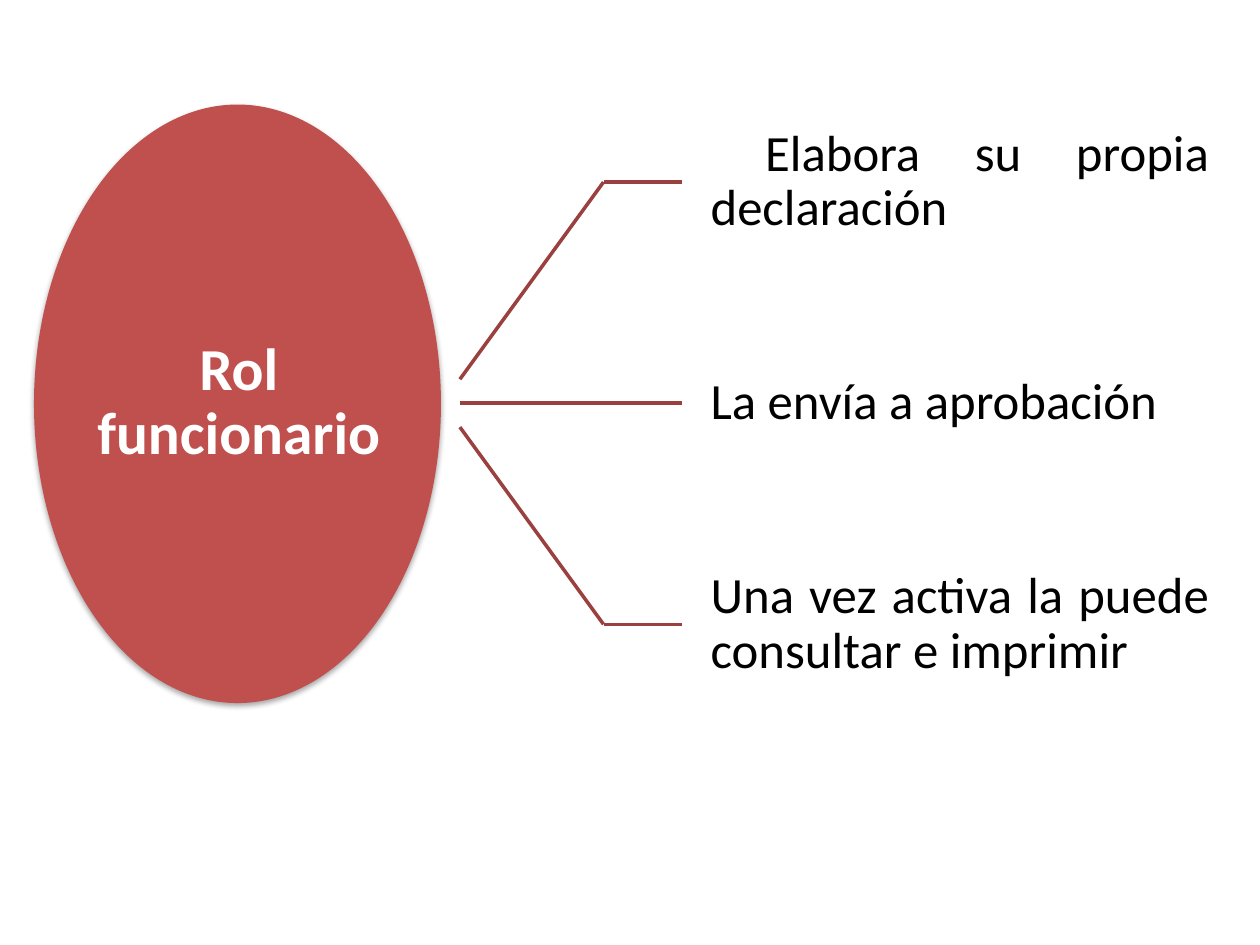
from dataclasses import dataclass

from lxml import etree
from pptx import Presentation
from pptx import util as u
from pptx.dml import color
from pptx.enum import shapes, text
from pptx.oxml import ns

FONT = "Calibri"
ROLE_FILL = "C0504D"
BRANCH_COLOR = "9A403E"
CENTER_Y = 3.2
ROW_PITCH = 1.755
START_PITCH = 0.19
START_X, ELBOW_X, LABEL_X = 3.65, 4.79, 5.41
LABEL_WIDTH, LABEL_HEIGHT = 4.42, 1.76


@dataclass
class Label:
    content: str
    left: float
    top: float
    width: float
    height: float
    inset: float
    size: float
    hex_color: str
    alignment: text.PP_ALIGN
    bold: bool = False


def rgb(hex_color: str) -> color.RGBColor:
    return color.RGBColor.from_string(hex_color)


def set_attributes(target, values: dict) -> None:
    for name, value in values.items():
        setattr(target, name, value)


def draw_label(slide, label: Label) -> None:
    box = slide.shapes.add_textbox(
        *map(u.Inches, (label.left, label.top, label.width, label.height))
    )
    frame = box.text_frame
    sides = ("margin_left", "margin_top", "margin_right", "margin_bottom")
    set_attributes(frame, dict.fromkeys(sides, u.Inches(label.inset)))
    set_attributes(frame, {"word_wrap": True, "vertical_anchor": text.MSO_ANCHOR.MIDDLE})
    paragraph = frame.paragraphs[0]
    set_attributes(paragraph, {"alignment": label.alignment, "line_spacing": 0.9})
    run = paragraph.add_run()
    run.text = label.content
    set_attributes(run.font, {"name": FONT, "size": u.Pt(label.size), "bold": label.bold})
    run.font.color.rgb = rgb(label.hex_color)


def draw_line(slide, x1: float, y1: float, x2: float, y2: float) -> None:
    line = slide.shapes.add_connector(
        shapes.MSO_CONNECTOR.STRAIGHT, *map(u.Inches, (x1, y1, x2, y2))
    )
    line.line.color.rgb = rgb(BRANCH_COLOR)
    line.line.width = u.Pt(2)
    etree.SubElement(line._element.spPr, ns.qn("a:effectLst"))


def draw_role_ellipse(slide) -> None:
    ellipse = slide.shapes.add_shape(
        shapes.MSO_SHAPE.OVAL, *map(u.Inches, (0.27, 0.83, 3.23, 4.75))
    )
    ellipse.fill.solid()
    ellipse.fill.fore_color.rgb = rgb(ROLE_FILL)
    ellipse.line.fill.background()
    ellipse.shadow.inherit = False
    effects = ellipse._element.spPr.find(ns.qn("a:effectLst"))
    shadow = etree.SubElement(
        effects,
        ns.qn("a:outerShdw"),
        blurRad=str(u.Pt(3.1)),
        dist=str(u.Pt(1.8)),
        dir="5400000",
        rotWithShape="0",
    )
    shade = etree.SubElement(shadow, ns.qn("a:srgbClr"), val="000000")
    etree.SubElement(shade, ns.qn("a:alpha"), val="35000")


def draw_branch(slide, offset: int, content: str) -> None:
    row_y = CENTER_Y + offset * ROW_PITCH
    draw_line(slide, START_X, CENTER_Y + offset * START_PITCH, ELBOW_X, row_y)
    draw_line(slide, ELBOW_X, row_y, LABEL_X, row_y)
    draw_label(
        slide,
        Label(content, LABEL_X, row_y - LABEL_HEIGHT / 2, LABEL_WIDTH, LABEL_HEIGHT,
              0.23, 29, "000000", text.PP_ALIGN.JUSTIFY),
    )


def main() -> None:
    presentation = Presentation()
    set_attributes(
        presentation, {"slide_width": u.Inches(10), "slide_height": u.Inches(7.5)}
    )
    slide = presentation.slides.add_slide(presentation.slide_layouts[6])
    draw_role_ellipse(slide)
    draw_label(
        slide,
        Label("Rol funcionario", 0.75, 1.52, 2.29, 3.36, 0, 34, "FFFFFF",
              text.PP_ALIGN.CENTER, bold=True),
    )
    branches = (
        " Elabora su propia declaración",
        "La envía a aprobación",
        "Una vez activa la puede consultar e imprimir",
    )
    for offset, content in enumerate(branches, start=-1):
        draw_branch(slide, offset, content)
    presentation.save("out.pptx")


if __name__ == "__main__":
    main()
